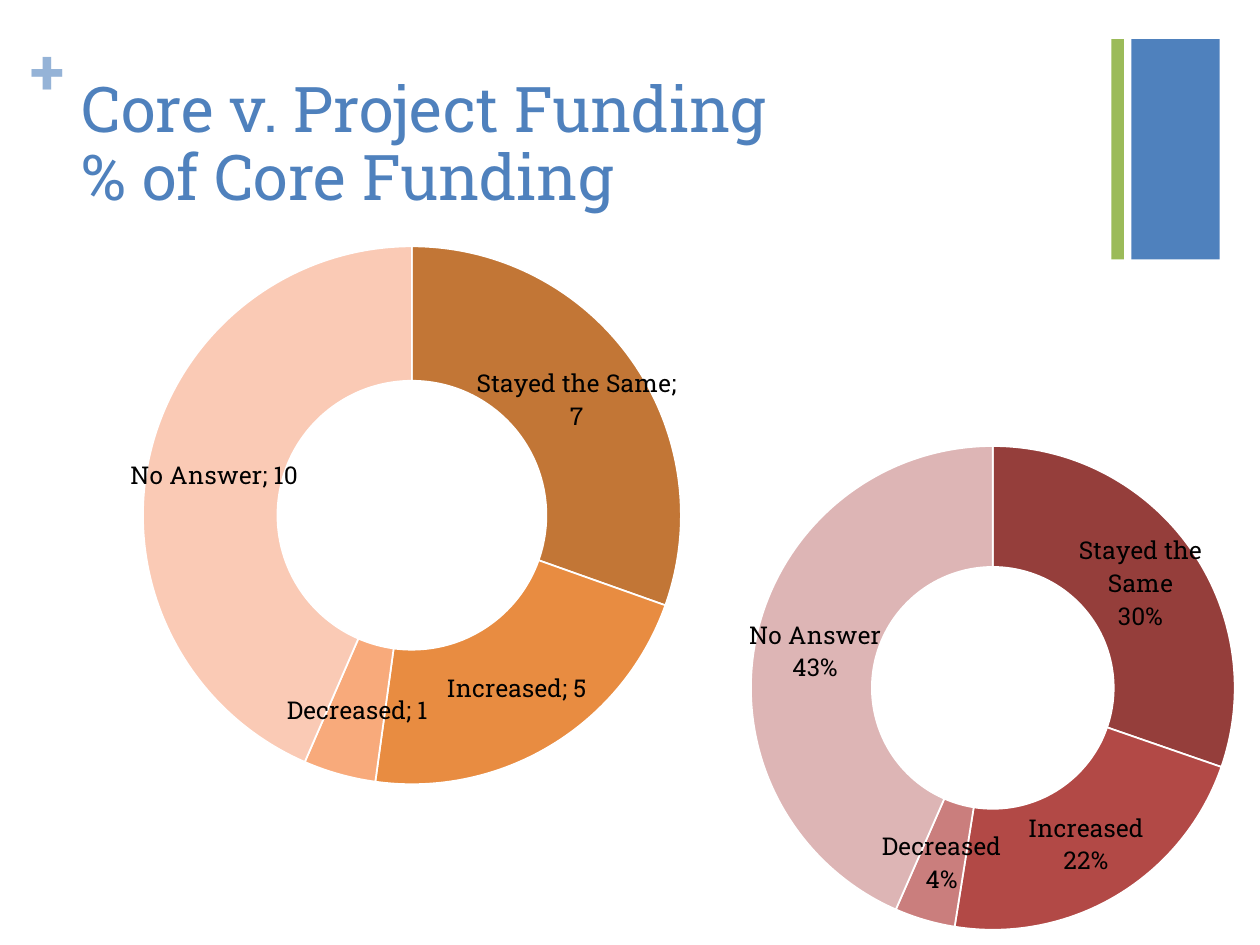
from lxml import etree
from pptx import Presentation
from pptx.chart.data import CategoryChartData
from pptx.dml.color import RGBColor
from pptx.enum.chart import XL_CHART_TYPE
from pptx.enum.shapes import MSO_SHAPE
from pptx.enum.text import MSO_ANCHOR
from pptx.oxml.ns import qn
from pptx.util import Inches, Pt

FONT = "Roboto Slab"
BLUE = RGBColor(0x4F, 0x81, 0xBD)
LIGHT_BLUE = RGBColor(0x95, 0xB3, 0xD7)
GREEN = RGBColor(0x9B, 0xBB, 0x59)
BLACK = RGBColor(0, 0, 0)
WHITE = RGBColor(0xFF, 0xFF, 0xFF)
ORANGES = [RGBColor.from_string(c) for c in ("C27636", "E88C41", "F8AA7B", "FACAB5")]
REDS = [RGBColor.from_string(c) for c in ("953E3B", "B24946", "CA7E7D", "DDB5B5")]

# Content: text, box, inner margins (left, top), size, colour, bold
TEXTS = [
    ("+", (0.24, 0.25, 0.29, 0.61), (0, 0), 36, LIGHT_BLUE, True),
    ("Core v. Project Funding \v% of Core Funding",
     (0.55, 0.53, 8.26, 1.22), (0.1, 0.09), 36, BLUE, False),
]
BARS = [((8.98, 0.31, 0.7, 1.75), BLUE), ((8.82, 0.31, 0.1, 1.75), GREEN)]
ANSWERS = ["Stayed the Same", "Increased", "Decreased", "No Answer"]
RINGS = [
    dict(box=(0, 1.82, 6.43, 4.55), centre=(3.27, 4.09), diameter=4.27,
         values=[7, 5, 1, 10], colours=ORANGES, percent=False, separator="; "),
    dict(box=(5.29, 3.39, 5.11, 4.27), centre=(7.88, 5.46), diameter=3.84,
         values=[30, 22, 4, 43], colours=REDS, percent=True, separator="\n"),
]


def add_bar(page, box, colour):
    bar = page.shapes.add_shape(MSO_SHAPE.RECTANGLE, *map(Inches, box))
    bar.shadow.inherit = False
    bar.fill.solid()
    bar.fill.fore_color.rgb = colour
    bar.line.fill.background()


def add_text(page, text, box, margins, size, colour, bold):
    frame = page.shapes.add_textbox(*map(Inches, box)).text_frame
    frame.word_wrap = True
    frame.vertical_anchor = MSO_ANCHOR.TOP
    frame.margin_left = frame.margin_right = Inches(margins[0])
    frame.margin_top = frame.margin_bottom = Inches(margins[1])
    para = frame.paragraphs[0]
    para.text = text
    para.line_spacing = 0.9 if "\v" in text else 1.0
    for span in para.runs:
        span.font.name = FONT
        span.font.size = Pt(size)
        span.font.bold = bold
        span.font.color.rgb = colour


def place_plot(chart, box, centre, diameter):
    """Fix the ring's square inside the chart frame, as fractions of it."""
    area = chart._chartSpace.chart.plotArea
    for old in area.findall(qn("c:layout")):
        area.remove(old)
    layout = etree.Element(qn("c:layout"))
    area.insert(0, layout)
    manual = etree.SubElement(layout, qn("c:manualLayout"))
    left, top, width, height = box
    settings = {
        "layoutTarget": "inner", "xMode": "edge", "yMode": "edge",
        "x": round((centre[0] - diameter / 2 - left) / width, 4),
        "y": round((centre[1] - diameter / 2 - top) / height, 4),
        "w": round(diameter / width, 4),
        "h": round(diameter / height, 4),
    }
    for name, value in settings.items():
        etree.SubElement(manual, qn("c:" + name)).set("val", str(value))


def add_ring(page, box, centre, diameter, values, colours, percent, separator):
    data = CategoryChartData()
    data.categories = ANSWERS
    data.add_series("Series 1", values)
    chart = page.shapes.add_chart(
        XL_CHART_TYPE.DOUGHNUT, *map(Inches, box), data).chart
    chart.has_legend = False
    chart.has_title = False
    chart.font.name = FONT
    chart.font.size = Pt(14)
    chart.font.color.rgb = BLACK
    place_plot(chart, box, centre, diameter)

    plot = chart.plots[0]
    plot.vary_by_categories = True
    for index, colour in enumerate(colours):
        style = plot.series[0].points[index].format
        style.fill.solid()
        style.fill.fore_color.rgb = colour
        style.line.color.rgb = WHITE
        style.line.width = Pt(1)

    labels = plot.series[0].data_labels
    labels.show_category_name = True
    labels.show_value = not percent
    labels.show_percentage = percent
    labels.font.name = FONT
    labels.font.size = Pt(14)
    labels.font.color.rgb = BLACK
    # The separator follows the show flags
    mark = etree.Element(qn("c:separator"))
    mark.text = separator
    labels._element.find(qn("c:showBubbleSize")).addnext(mark)


def main():
    deck = Presentation()
    deck.slide_width, deck.slide_height = Inches(10), Inches(7.5)
    page = deck.slides.add_slide(deck.slide_layouts[6])
    for bar in BARS:
        add_bar(page, *bar)
    for text in TEXTS:
        add_text(page, *text)
    for ring in RINGS:
        add_ring(page, **ring)
    deck.save("out.pptx")


if __name__ == "__main__":
    main()
